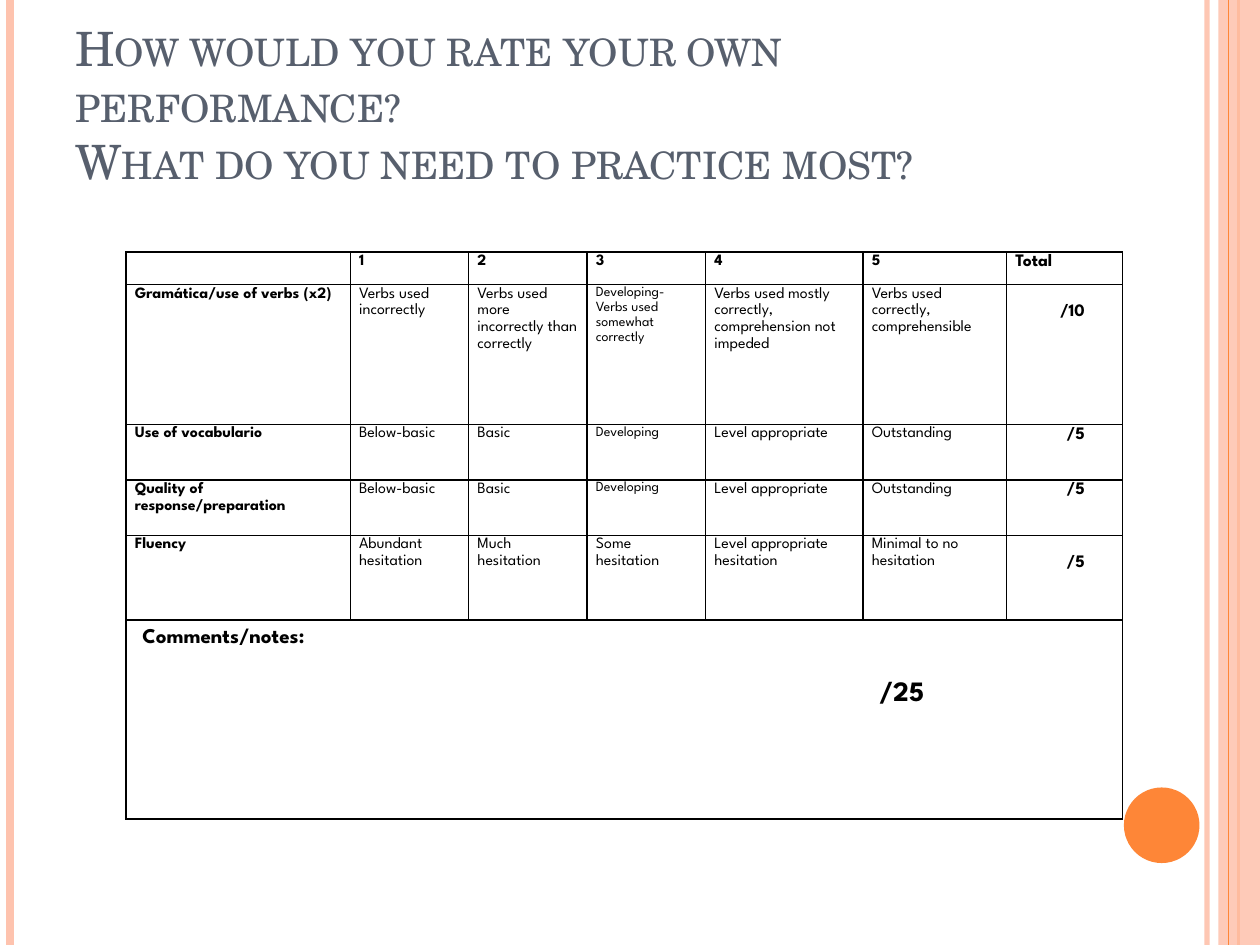
from lxml import etree
from pptx import Presentation
from pptx.dml.color import RGBColor
from pptx.enum.shapes import MSO_CONNECTOR, MSO_SHAPE
from pptx.enum.text import MSO_ANCHOR, MSO_AUTO_SIZE, PP_ALIGN
from pptx.oxml.ns import qn
from pptx.util import Inches, Pt

STRAIGHT = MSO_CONNECTOR.STRAIGHT
RECTANGLE, OVAL = MSO_SHAPE.RECTANGLE, MSO_SHAPE.OVAL
BOTTOM = MSO_ANCHOR.BOTTOM
NO_AUTOFIT = MSO_AUTO_SIZE.NONE
RIGHT = PP_ALIGN.RIGHT

PEACH, ORANGE, SLATE, BLACK = "FEC3AE", "FE8637", "575F6D", "000000"
TITLE_FONT, TABLE_FONT = "TeX Gyre Schola", "League Spartan"

TITLE = "How would you rate your own performance?\vWhat do you need to practice most?"
COLUMN_WIDTHS = [1.78, 0.94, 0.94, 0.94, 1.25, 1.14, 0.92]
ROW_HEIGHTS = [0.26, 1.11, 0.44, 0.44, 0.67, 1.58]
RUBRIC = [
    ["", "1", "2", "3", "4", "5", "Total"],
    ["Gramática/use of verbs (x2)", "Verbs used incorrectly",
     "Verbs used more incorrectly than correctly",
     "Developing- Verbs used somewhat correctly",
     "Verbs used mostly correctly, comprehension not impeded",
     "Verbs used correctly, comprehensible", "/10"],
    ["Use of vocabulario", "Below-basic", "Basic", "Developing",
     "Level appropriate", "Outstanding", "/5"],
    ["Quality of response/preparation", "Below-basic", "Basic", "Developing",
     "Level appropriate", "Outstanding", "/5"],
    ["Fluency", "Abundant hesitation", "Much hesitation", "Some hesitation",
     "Level appropriate hesitation", "Minimal to no hesitation", "/5"],
]
LOWERED_SCORE_ROWS = (1, 4)


def color(hex_string):
    return RGBColor.from_string(hex_string)


def set_opacity(element, percent):
    """Make the solid colour inside a fill or line partly transparent."""
    for solid_color in element.iter(qn("a:srgbClr")):
        etree.SubElement(solid_color, qn("a:alpha"), val=str(percent * 1000))


def add_vertical_line(slide, x, line_color, width, opacity=100):
    line = slide.shapes.add_connector(
        STRAIGHT, Inches(x), Inches(0), Inches(x), Inches(7.5))
    line.line.color.rgb = color(line_color)
    line.line.width = Pt(width)
    properties = line._element.spPr
    if opacity < 100:
        set_opacity(properties, opacity)
    etree.SubElement(properties, qn("a:effectLst"))


def add_filled_shape(slide, kind, left, top, width, height, fill, opacity=100):
    shape = slide.shapes.add_shape(
        kind, Inches(left), Inches(top), Inches(width), Inches(height))
    shape.shadow.inherit = False
    shape.fill.solid()
    shape.fill.fore_color.rgb = color(fill)
    shape.line.fill.background()
    if opacity < 100:
        set_opacity(shape._element.spPr, opacity)


def format_runs(paragraph, font, size, font_color, bold=False):
    for run in paragraph.runs:
        run.font.name = font
        run.font.size = Pt(size)
        run.font.color.rgb = color(font_color)
        run.font.bold = bold


def add_title(slide):
    box = slide.shapes.add_textbox(
        Inches(0.5), Inches(0.3), Inches(8.17), Inches(1.25))
    frame = box.text_frame
    frame.word_wrap = True
    frame.auto_size = NO_AUTOFIT
    frame.vertical_anchor = BOTTOM
    frame.text = TITLE
    paragraph = frame.paragraphs[0]
    format_runs(paragraph, TITLE_FONT, 27, SLATE)
    for run in paragraph.runs:
        run.font._element.set("cap", "small")


def style_cell(cell):
    """Give a cell thin black borders, no fill and tight margins."""
    cell.margin_left = cell.margin_right = Inches(0.07)
    cell.margin_top = cell.margin_bottom = 0
    properties = cell._tc.get_or_add_tcPr()
    for side in ("lnL", "lnR", "lnT", "lnB"):
        border = etree.SubElement(properties, qn("a:" + side), w=str(Pt(1)))
        fill = etree.SubElement(border, qn("a:solidFill"))
        etree.SubElement(fill, qn("a:srgbClr"), val=BLACK)
    cell.fill.background()


def write_paragraph(paragraph, text, size, bold):
    paragraph.text = text
    paragraph.line_spacing = 1.15
    format_runs(paragraph, TABLE_FONT, size, BLACK, bold)
    if not text:
        paragraph._p.get_or_add_endParaRPr().set("sz", str(size * 100))


def rubric_text_size(row, column):
    if column == 6:
        return 10
    return 8 if column == 3 and row in (1, 2, 3) else 9


def fill_rubric(table):
    for row, texts in enumerate(RUBRIC):
        for column, text in enumerate(texts):
            cell = table.cell(row, column)
            paragraph = cell.text_frame.paragraphs[0]
            bold = row == 0 or column in (0, 6)
            write_paragraph(paragraph, text, rubric_text_size(row, column), bold)
            if row > 0 and column == 6:
                paragraph.alignment = RIGHT
                cell.margin_right = Inches(0.3)
                if row in LOWERED_SCORE_ROWS:
                    cell.margin_top = Inches(0.14)


def fill_comments(table):
    cell = table.cell(5, 0)
    cell.merge(table.cell(5, 6))
    cell.margin_top = Inches(0.05)
    heading = cell.text_frame.paragraphs[0]
    total = cell.text_frame.add_paragraph()
    write_paragraph(heading, "Comments/notes:", 12, True)
    write_paragraph(total, "/25", 16, True)
    total.space_before = Pt(17)
    for paragraph, indent in ((heading, 0.06), (total, 5.91)):
        paragraph._p.get_or_add_pPr().set("marL", str(Inches(indent)))


def add_rubric_table(slide):
    table = slide.shapes.add_table(
        len(ROW_HEIGHTS), len(COLUMN_WIDTHS),
        Inches(1), Inches(2), Inches(7.92), Inches(4.5)).table
    table.first_row = table.horz_banding = False
    for column, width in zip(table.columns, COLUMN_WIDTHS):
        column.width = Inches(width)
    for row, height in zip(table.rows, ROW_HEIGHTS):
        row.height = Inches(height)
    for cell in table.iter_cells():
        style_cell(cell)
    fill_rubric(table)
    fill_comments(table)


def main():
    presentation = Presentation()
    presentation.slide_width = Inches(10)
    presentation.slide_height = Inches(7.5)
    slide = presentation.slides.add_slide(presentation.slide_layouts[6])
    add_vertical_line(slide, 9.58, PEACH, 3, opacity=93)
    add_vertical_line(slide, 0.08, PEACH, 4.5)
    add_vertical_line(slide, 9.83, ORANGE, 1.5)
    add_filled_shape(slide, RECTANGLE, 9.67, 0, 0.33, 7.5, PEACH, opacity=87)
    add_vertical_line(slide, 9.75, ORANGE, 0.75)
    add_filled_shape(slide, OVAL, 8.92, 6.25, 0.6, 0.6, ORANGE)
    add_title(slide)
    add_rubric_table(slide)
    presentation.save("out.pptx")


if __name__ == "__main__":
    main()
